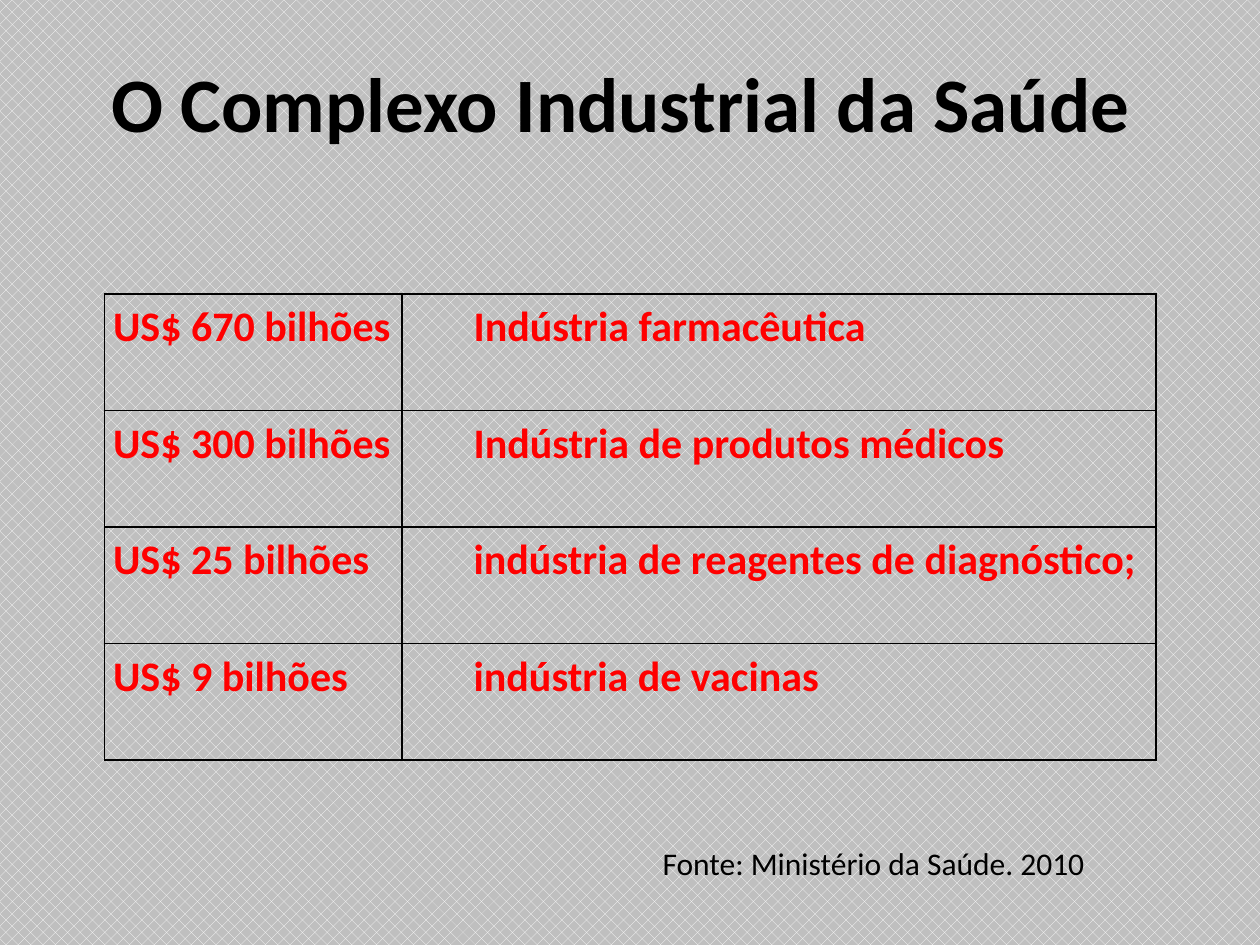
from lxml.etree import SubElement
from pptx import Presentation
from pptx.dml.color import RGBColor
from pptx.enum.dml import MSO_PATTERN
from pptx.enum.text import MSO_ANCHOR, MSO_AUTO_SIZE, PP_ALIGN
from pptx.oxml.ns import qn
from pptx.util import Pt

TITLE = "O Complexo Industrial da Saúde "
MARKETS = [
    ("US$ 670 bilhões", "Indústria farmacêutica"),
    ("US$ 300 bilhões", "Indústria de produtos médicos"),
    ("US$ 25 bilhões", "indústria de reagentes de diagnóstico;"),
    ("US$ 9 bilhões", "indústria de vacinas"),
]
SOURCE = "Fonte: Ministério da Saúde. 2010"

BLACK = RGBColor(0, 0, 0)
RED = RGBColor(255, 0, 0)
WHITE = RGBColor(255, 255, 255)
GRAY = RGBColor(0xBF, 0xBF, 0xBF)
FONT = "Calibri"
COLUMNS = (170.1, 430.9)
INDENTS = (0, 36)
ROW_HEIGHT = 66.6


def add_run(p, text, size, color, bold=False):
    r = p.add_run()
    r.text = text
    r.font.name = FONT
    r.font.size = Pt(size)
    r.font.bold = bold
    r.font.color.rgb = color


def add_borders(cell):
    tc_pr = cell._tc.get_or_add_tcPr()
    for side in ("a:lnL", "a:lnR", "a:lnT", "a:lnB"):
        ln = SubElement(tc_pr, qn(side), w=str(Pt(1)))
        fill = SubElement(ln, qn("a:solidFill"))
        SubElement(fill, qn("a:srgbClr"), val=str(BLACK))


def add_title(slide):
    sp = slide.shapes.title
    sp.left, sp.top, sp.width, sp.height = Pt(36), Pt(21.6), Pt(648), Pt(72.7)
    tf = sp.text_frame
    tf.vertical_anchor = MSO_ANCHOR.MIDDLE
    p = tf.paragraphs[0]
    p.alignment = PP_ALIGN.CENTER
    add_run(p, TITLE, 44, BLACK, True)


def add_market_table(slide):
    table = slide.shapes.add_table(
        len(MARKETS), len(COLUMNS), Pt(59.6), Pt(168),
        Pt(sum(COLUMNS)), Pt(ROW_HEIGHT * len(MARKETS))).table
    table.first_row = False
    table.horz_banding = False
    for column, width in zip(table.columns, COLUMNS):
        column.width = Pt(width)
    for i, market in enumerate(MARKETS):
        table.rows[i].height = Pt(ROW_HEIGHT)
        for j, text in enumerate(market):
            cell = table.cell(i, j)
            cell.margin_left = cell.margin_right = Pt(5)
            cell.margin_top = cell.margin_bottom = 0
            add_borders(cell)
            cell.fill.background()
            p = cell.text_frame.paragraphs[0]
            p.line_spacing = 1.15
            p._p.get_or_add_pPr().set("marL", str(Pt(INDENTS[j])))
            add_run(p, text, 24, RED, True)


def add_source(slide):
    sp = slide.shapes.add_textbox(Pt(371.5), Pt(478.8), Pt(289.5), Pt(29))
    tf = sp.text_frame
    tf.word_wrap = True
    tf.auto_size = MSO_AUTO_SIZE.SHAPE_TO_FIT_TEXT
    add_run(tf.paragraphs[0], SOURCE, 18, BLACK)


def main():
    prs = Presentation()
    prs.slide_width, prs.slide_height = Pt(720), Pt(540)
    slide = prs.slides.add_slide(prs.slide_layouts[5])
    bg = slide.background.fill
    bg.patterned()
    bg.pattern = MSO_PATTERN.PERCENT_30
    bg.fore_color.rgb = WHITE
    bg.back_color.rgb = GRAY
    add_title(slide)
    add_market_table(slide)
    add_source(slide)
    prs.save("out.pptx")


if __name__ == "__main__":
    main()
